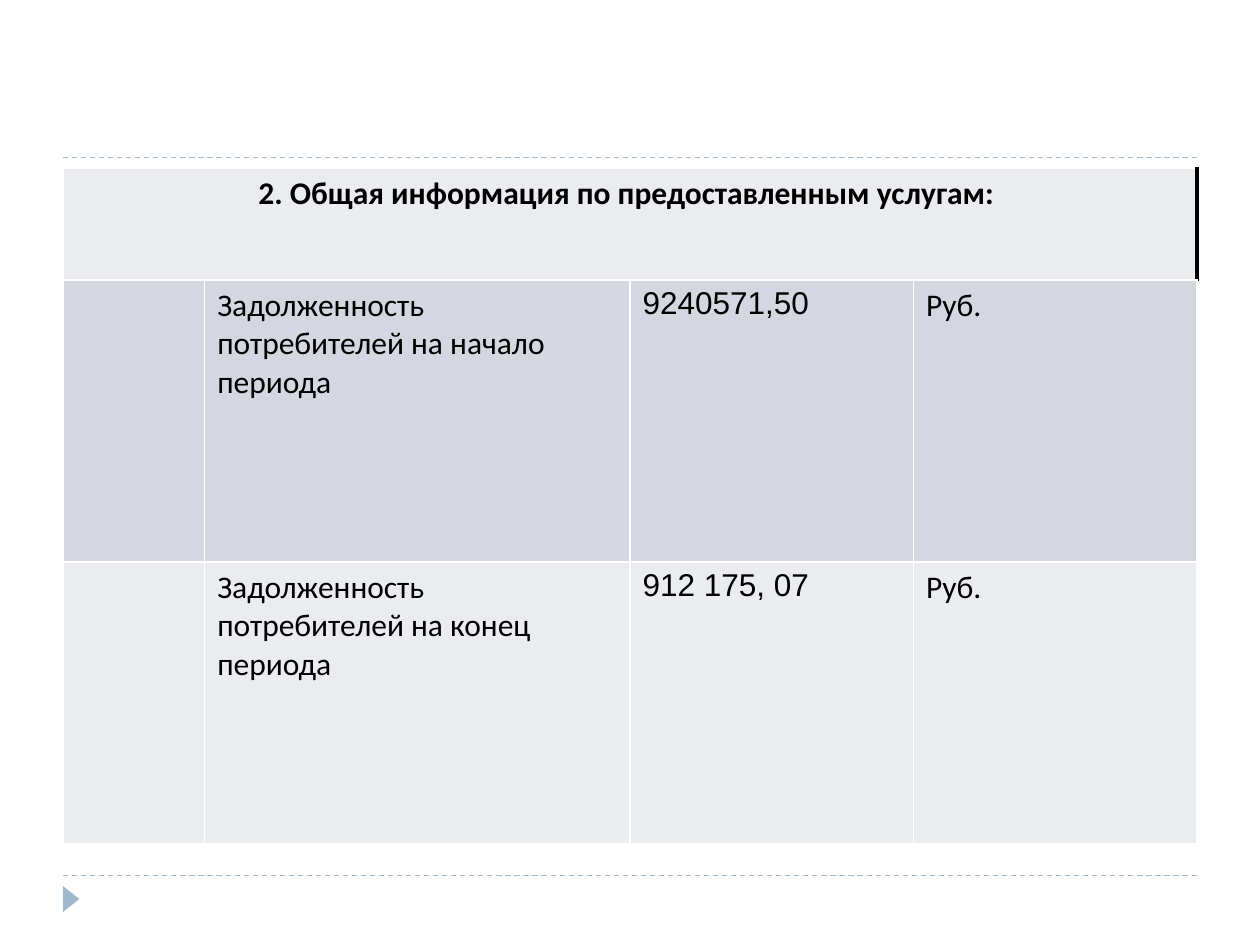
from lxml import etree
from pptx import Presentation
from pptx.dml.color import RGBColor
from pptx.enum.dml import MSO_LINE
from pptx.enum.shapes import MSO_CONNECTOR, MSO_SHAPE
from pptx.enum.text import PP_ALIGN
from pptx.oxml.ns import qn
from pptx.util import Pt

DASH = MSO_LINE.DASH
STRAIGHT = MSO_CONNECTOR.STRAIGHT
TRIANGLE = MSO_SHAPE.ISOSCELES_TRIANGLE
CENTER = PP_ALIGN.CENTER

# Content
HEADING = "2. Общая информация по предоставленным услугам: "
ROWS = [
    ("", "Задолженность потребителей на начало периода", "9240571,50", "Руб."),
    ("", "Задолженность потребителей на конец периода", "912 175, 07", "Руб."),
]
COLUMN_FONTS = ["Calibri", "Calibri", "Arial", "Calibri"]

COLORS = {"accent": "9FB8CD", "light": "EBECF0", "dark": "D5D7E0",
          "text": "000000", "border": "FFFFFF"}

# Layout, in points
LEFT, WIDTH = 36, 648
RULE_TOPS = [90, 500.4]
TABLE_TOP = 96
COLUMN_WIDTHS = [81, 243, 162, 162]
ROW_HEIGHTS = [64, 161.2, 161.2]


def color(name):
    return RGBColor.from_string(COLORS[name])


def set_border(cell, side, name, width):
    line = etree.SubElement(cell._tc.get_or_add_tcPr(), qn(f"a:ln{side}"), w=str(Pt(width)))
    fill = etree.SubElement(line, qn("a:solidFill"))
    etree.SubElement(fill, qn("a:srgbClr"), val=COLORS[name])


def format_cell(cell, fill, text="", font="Calibri", bold=False, right=("border", 1)):
    for side in "LRTB":
        set_border(cell, side, *(right if side == "R" else ("border", 1)))
    cell.fill.solid()
    cell.fill.fore_color.rgb = color(fill)
    cell.text = text
    para = cell.text_frame.paragraphs[0]
    para.font.size = Pt(18)
    para.font.name = font
    para.font.bold = bold
    para.font.color.rgb = color("text")
    return para


deck = Presentation()
deck.slide_width, deck.slide_height = Pt(720), Pt(540)
page = deck.slides.add_slide(deck.slide_layouts[6])

# Dashed rules above and below the table
for top in RULE_TOPS:
    rule = page.shapes.add_connector(STRAIGHT, Pt(LEFT), Pt(top), Pt(LEFT + WIDTH), Pt(top))
    rule.line.color.rgb = color("accent")
    rule.line.width = Pt(0.75)
    rule.line.dash_style = DASH
    etree.SubElement(rule._element.spPr, qn("a:effectLst"))

# Footer marker
marker = page.shapes.add_shape(TRIANGLE, Pt(33.1), Pt(509), Pt(15), Pt(9.4))
marker.rotation = 90
marker.shadow.inherit = False
marker.fill.solid()
marker.fill.fore_color.rgb = color("accent")
marker.line.fill.background()

# Table of consumer debt
table = page.shapes.add_table(len(ROW_HEIGHTS), len(COLUMN_WIDTHS), Pt(LEFT), Pt(TABLE_TOP),
                              Pt(WIDTH), Pt(sum(ROW_HEIGHTS))).table
for column, width in zip(table.columns, COLUMN_WIDTHS):
    column.width = Pt(width)
for row, height in zip(table.rows, ROW_HEIGHTS):
    row.height = Pt(height)

# Heading row, spanning all columns
heading, *_, heading_end = table.rows[0].cells
heading.merge(heading_end)
edge = ("text", 2.25)
format_cell(heading, "light", HEADING, bold=True, right=edge).alignment = CENTER
format_cell(heading_end, "light", right=edge)

# Body rows, in alternating shades
for number, texts in enumerate(ROWS, 1):
    shade = "dark" if number % 2 else "light"
    for cell, text, font in zip(table.rows[number].cells, texts, COLUMN_FONTS):
        format_cell(cell, shade, text, font)

deck.save("out.pptx")
